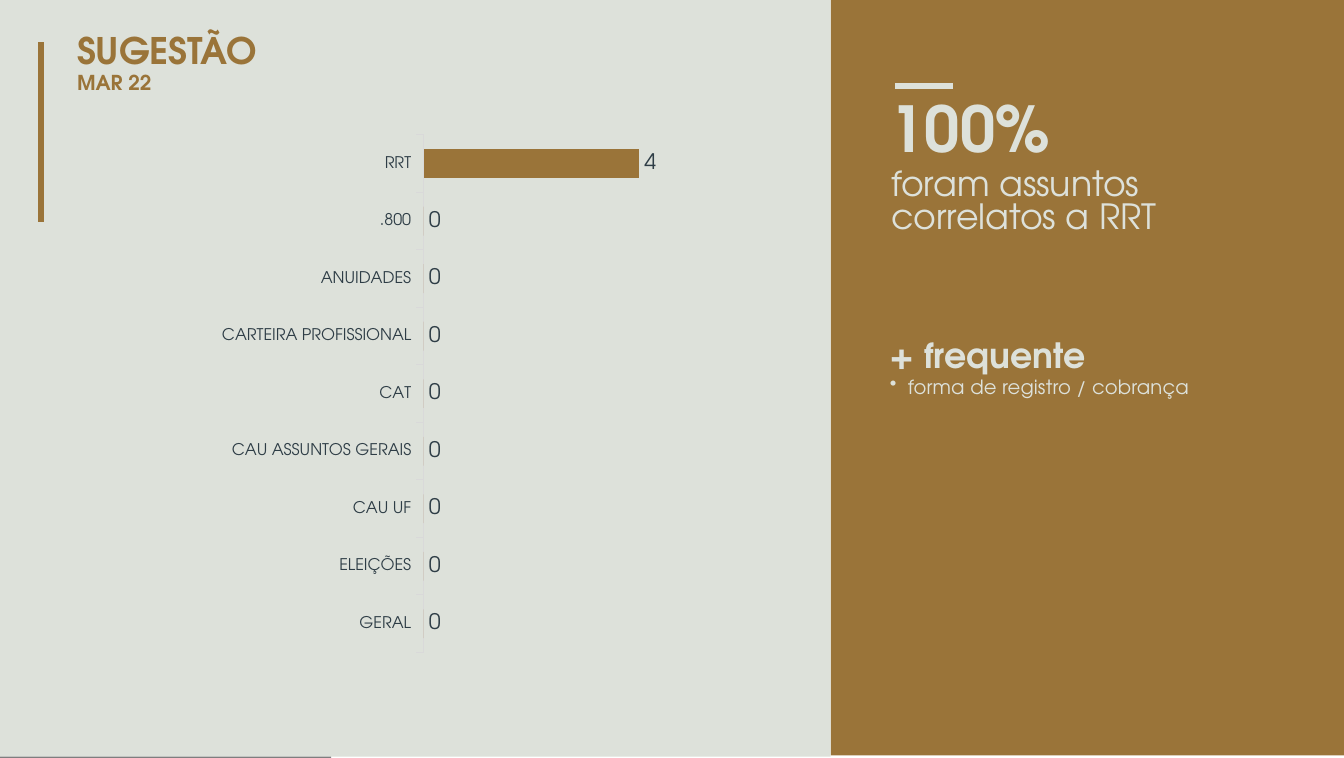
from dataclasses import dataclass

from lxml import etree
from pptx import Presentation
from pptx.chart.data import CategoryChartData
from pptx.dml.color import RGBColor
from pptx.enum.chart import (XL_CHART_TYPE, XL_LABEL_POSITION, XL_TICK_LABEL_POSITION,
                             XL_TICK_MARK)
from pptx.enum.shapes import MSO_CONNECTOR, MSO_SHAPE
from pptx.oxml import parse_xml
from pptx.oxml.ns import nsdecls, qn
from pptx.util import Inches, Pt

BAR_CHART = XL_CHART_TYPE.BAR_CLUSTERED
OUTSIDE_END = XL_LABEL_POSITION.OUTSIDE_END
NO_LABELS = XL_TICK_LABEL_POSITION.NONE
TICK_OUTSIDE, TICK_NONE = XL_TICK_MARK.OUTSIDE, XL_TICK_MARK.NONE
STRAIGHT = MSO_CONNECTOR.STRAIGHT
RECTANGLE = MSO_SHAPE.RECTANGLE
POINTS_PER_INCH = 72


@dataclass(frozen=True)
class Theme:
    font: str = "TeX Gyre Adventor"
    brown: RGBColor = RGBColor(0x9A, 0x74, 0x39)
    pale: RGBColor = RGBColor(0xDD, 0xE1, 0xDA)
    ink: RGBColor = RGBColor(0x2E, 0x3D, 0x46)
    axis: RGBColor = RGBColor(0xD9, 0xD9, 0xD9)
    strip: RGBColor = RGBColor(0x7E, 0x7E, 0x7E)
    title: float = 20.5
    month: float = 11.5
    figure: float = 35.5
    statement: float = 19.5
    item: float = 11
    value: float = 12
    category: float = 9


theme = Theme()


def add_paragraph(frame, text, *, size, color, line, bold=False, before=0,
                  spacing=0, margin=0, bullet=False):
    """Fill the frame's empty first paragraph, or append another; line is in points."""
    paragraph = frame.paragraphs[0] if not frame.text else frame.add_paragraph()
    paragraph.line_spacing = Pt(line)
    paragraph.space_before = Pt(before)
    run = paragraph.add_run()
    run.text = text
    run.font.name = theme.font
    run.font.size = Pt(size)
    run.font.bold = bold
    run.font.color.rgb = color
    run.font._element.set("spc", str(round(spacing * 100)))
    properties = paragraph._p.get_or_add_pPr()
    properties.set("marL", str(Inches(margin)))
    if bullet:
        properties.set("indent", str(Inches(-0.14)))
        etree.SubElement(properties, qn("a:buChar")).set("char", "•")


def add_text_box(left, top, width, height):
    frame = slide.shapes.add_textbox(
        Inches(left), Inches(top), Inches(width), Inches(height)).text_frame
    frame.word_wrap = True
    frame.margin_left = frame.margin_right = frame.margin_bottom = 0
    frame.margin_top = Inches(0.02)
    return frame


presentation = Presentation()
presentation.slide_width = Inches(753.6 / POINTS_PER_INCH)
presentation.slide_height = Inches(424.8 / POINTS_PER_INCH)
slide = presentation.slides.add_slide(presentation.slide_layouts[6])

# Panels and accent lines
for left, top, width, height, color in (
    (0, 0, 6.47, 5.89, theme.pale),
    (6.47, 0, 4, 5.88, theme.brown),
    (0, 5.89, 2.58, 0.01, theme.strip),
):
    panel = slide.shapes.add_shape(
        RECTANGLE, Inches(left), Inches(top), Inches(width), Inches(height))
    panel.shadow.inherit = False
    panel.fill.solid()
    panel.fill.fore_color.rgb = color
    panel.line.fill.background()

for start_x, start_y, end_x, end_y, color in (
    (0.32, 0.33, 0.32, 1.73, theme.brown),
    (6.97, 0.67, 7.42, 0.67, theme.pale),
):
    accent = slide.shapes.add_connector(
        STRAIGHT, Inches(start_x), Inches(start_y), Inches(end_x), Inches(end_y))
    accent.line.color.rgb = color
    accent.line.width = Pt(3.6)
    etree.SubElement(accent._element.spPr, qn("a:effectLst"))

# Suggestions by subject
subjects = ("RRT", ".800", "ANUIDADES", "CARTEIRA PROFISSIONAL", "CAT",
            "CAU ASSUNTOS GERAIS", "CAU UF", "ELEIÇÕES", "GERAL")
chart_data = CategoryChartData()
chart_data.categories = subjects
chart_data.add_series("Sugestão", [4] + [0] * (len(subjects) - 1))

chart_left, chart_top, chart_width, chart_height = 0.5, 0.95, 5.8, 4.25
chart = slide.shapes.add_chart(
    BAR_CHART, Inches(chart_left), Inches(chart_top),
    Inches(chart_width), Inches(chart_height), chart_data).chart
chart.has_legend = False
chart.has_title = False
chart.font.name = theme.font
chart.font.color.rgb = theme.ink

plot = chart.plots[0]
plot.gap_width = 100
plot.vary_by_categories = False
bars = plot.series[0].format.fill
bars.solid()
bars.fore_color.rgb = theme.brown
plot.has_data_labels = True
labels = plot.data_labels
labels.show_value = True
labels.position = OUTSIDE_END
labels.font.name = theme.font
labels.font.size = Pt(theme.value)
labels.font.color.rgb = theme.ink

subject_axis = chart.category_axis
subject_axis.reverse_order = True
subject_axis.major_tick_mark = TICK_OUTSIDE
subject_axis.format.line.color.rgb = theme.axis
subject_axis.format.line.width = Pt(0.6)
subject_axis.tick_labels.font.name = theme.font
subject_axis.tick_labels.font.size = Pt(theme.category)
subject_axis.tick_labels.font.color.rgb = theme.ink

value_axis = chart.value_axis
value_axis.minimum_scale = 0
value_axis.maximum_scale = 6
value_axis.has_major_gridlines = False
value_axis.major_tick_mark = TICK_NONE
value_axis.tick_label_position = NO_LABELS
value_axis.format.line.fill.background()

plot_area = chart._chartSpace.chart.plotArea
for layout in plot_area.findall(qn("c:layout")):
    plot_area.remove(layout)
plot_area.insert(0, parse_xml(
    f'<c:layout {nsdecls("c")}><c:manualLayout><c:layoutTarget val="inner"/>'
    '<c:xMode val="edge"/><c:yMode val="edge"/>'
    f'<c:x val="{(3.3 - chart_left) / chart_width:.4f}"/>'
    f'<c:y val="{(1.05 - chart_top) / chart_height:.4f}"/>'
    f'<c:w val="{2.52 / chart_width:.4f}"/><c:h val="{4.03 / chart_height:.4f}"/>'
    '</c:manualLayout></c:layout>'))

# Texts
heading = add_text_box(0.56, 0.22, 5.82, 0.75)
add_paragraph(heading, "SUGESTÃO", size=theme.title, color=theme.brown, line=23.1,
              bold=True, before=1.1, spacing=-0.1, margin=0.04)
add_paragraph(heading, "MAR 22", size=theme.month, color=theme.brown, line=12.3,
              bold=True, before=0.5, margin=0.04)

share = add_text_box(6.92, 0.7, 2.3, 1.16)
add_paragraph(share, "100%", size=theme.figure, color=theme.pale, line=40.6,
              bold=True, before=1.1, spacing=-0.2, margin=0.01)
add_paragraph(share, "foram assuntos correlatos a RRT", size=theme.statement,
              color=theme.pale, line=18.9, before=2.5, spacing=-0.05, margin=0.02)

frequent = add_text_box(6.92, 2.59, 2.6, 0.51)
add_paragraph(frequent, "+ frequente", size=theme.statement, color=theme.pale,
              line=22.4, bold=True, before=0.9, spacing=-0.1, margin=0.01)
add_paragraph(frequent, "forma de registro / cobrança", size=theme.item,
              color=theme.pale, line=12.2, before=0.5, spacing=0.05, margin=0.15,
              bullet=True)

presentation.save("out.pptx")
